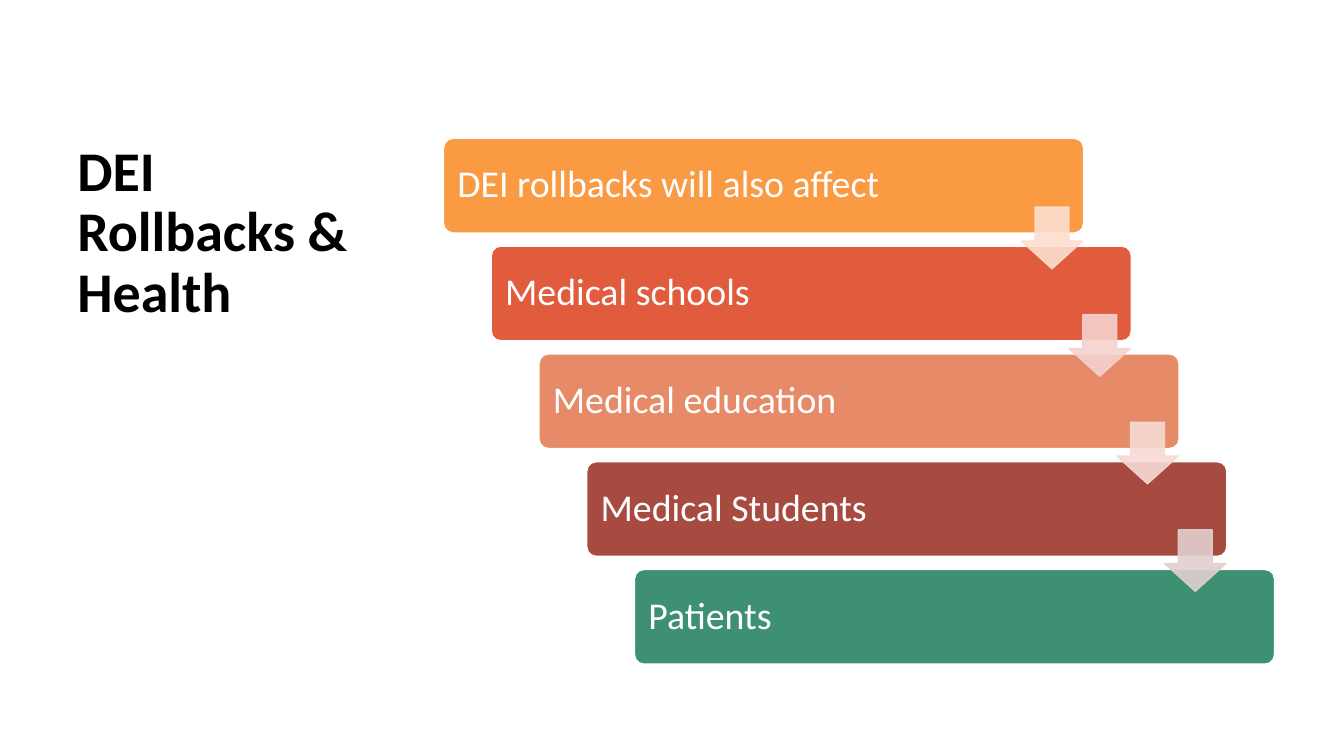
from dataclasses import dataclass

from lxml.etree import SubElement
from pptx import Presentation
from pptx.dml.color import RGBColor
from pptx.enum.shapes import MSO_SHAPE
from pptx.enum.text import MSO_ANCHOR, PP_ALIGN
from pptx.oxml.ns import qn
from pptx.shapes.autoshape import Shape
from pptx.slide import Slide
from pptx.text.text import TextFrame
from pptx.util import Pt

FONT = "Calibri"
BLACK = RGBColor(0x00, 0x00, 0x00)
WHITE = RGBColor(0xFF, 0xFF, 0xFF)
ORANGE = RGBColor(0xFA, 0x9A, 0x42)
RED = RGBColor(0xE1, 0x5C, 0x3D)
SALMON = RGBColor(0xE7, 0x8A, 0x67)
BRICK = RGBColor(0xA7, 0x4B, 0x40)
GREEN = RGBColor(0x3D, 0x90, 0x72)
PALE_ORANGE = RGBColor(0xFD, 0xDE, 0xCF)
PALE_RED = RGBColor(0xF4, 0xD2, 0xCE)
PALE_SALMON = RGBColor(0xF6, 0xDA, 0xD3)
PALE_BRICK = RGBColor(0xE1, 0xD0, 0xCF)

STEP_LEFT, STEP_TOP, STEP_WIDTH, STEP_HEIGHT = 316.8, 98.8, 457.2, 67.6
STEP_RIGHTWARD, STEP_DOWNWARD = 34.1, 77
ARROW_LEFT, ARROW_TOP, ARROW_SIZE = 729.5, 148, 44
ARROW_DOWNWARD = 76.8
ARROW_OPACITY = 90


@dataclass
class Step:
    label: str
    color: RGBColor


STEPS = [
    Step("DEI rollbacks will also affect", ORANGE),
    Step("Medical schools", RED),
    Step("Medical education", SALMON),
    Step("Medical Students", BRICK),
    Step("Patients", GREEN),
]
ARROW_COLORS = [PALE_ORANGE, PALE_RED, PALE_SALMON, PALE_BRICK]


def write(frame: TextFrame, text: str, size: float, color: RGBColor, bold: bool = False) -> None:
    frame.word_wrap = True
    para = frame.paragraphs[0]
    para.alignment = PP_ALIGN.LEFT
    para.line_spacing = 0.9
    span = para.add_run()
    span.text = text
    span.font.name = FONT
    span.font.size = Pt(size)
    span.font.bold = bold
    span.font.color.rgb = color


def paint(shape: Shape, fill: RGBColor, line: RGBColor) -> None:
    shape.shadow.inherit = False
    shape.fill.solid()
    shape.fill.fore_color.rgb = fill
    shape.line.color.rgb = line
    shape.line.width = Pt(1)


def set_opacity(shape: Shape, percent: int) -> None:
    """Apply one opacity to both the fill and the outline."""
    for color in shape.element.spPr.iter(qn("a:srgbClr")):
        SubElement(color, qn("a:alpha"), val=str(percent * 1000))


def add_title(page: Slide) -> None:
    box = page.shapes.add_textbox(Pt(48.2), Pt(98.6), Pt(229), Pt(375.8))
    write(box.text_frame, "DEI Rollbacks & Health", 40, BLACK, bold=True)


def add_step(page: Slide, index: int, step: Step) -> None:
    bar = page.shapes.add_shape(
        MSO_SHAPE.ROUNDED_RECTANGLE,
        Pt(STEP_LEFT + index * STEP_RIGHTWARD),
        Pt(STEP_TOP + index * STEP_DOWNWARD),
        Pt(STEP_WIDTH),
        Pt(STEP_HEIGHT),
    )
    bar.adjustments[0] = 0.1
    paint(bar, step.color, WHITE)
    frame = bar.text_frame
    frame.margin_left = frame.margin_right = Pt(8)
    frame.vertical_anchor = MSO_ANCHOR.MIDDLE
    write(frame, step.label, 27, WHITE)


def add_arrow(page: Slide, index: int, color: RGBColor) -> None:
    arrow = page.shapes.add_shape(
        MSO_SHAPE.DOWN_ARROW,
        Pt(ARROW_LEFT + index * STEP_RIGHTWARD),
        Pt(ARROW_TOP + index * ARROW_DOWNWARD),
        Pt(ARROW_SIZE),
        Pt(ARROW_SIZE),
    )
    arrow.adjustments[0] = 0.55
    arrow.adjustments[1] = 0.45
    paint(arrow, color, color)
    set_opacity(arrow, ARROW_OPACITY)


def main() -> None:
    deck = Presentation()
    deck.slide_width, deck.slide_height = Pt(960), Pt(540)
    page = deck.slides.add_slide(deck.slide_layouts[6])
    add_title(page)
    for index, step in enumerate(STEPS):
        add_step(page, index, step)
    for index, color in enumerate(ARROW_COLORS):
        add_arrow(page, index, color)
    deck.save("out.pptx")


if __name__ == "__main__":
    main()
